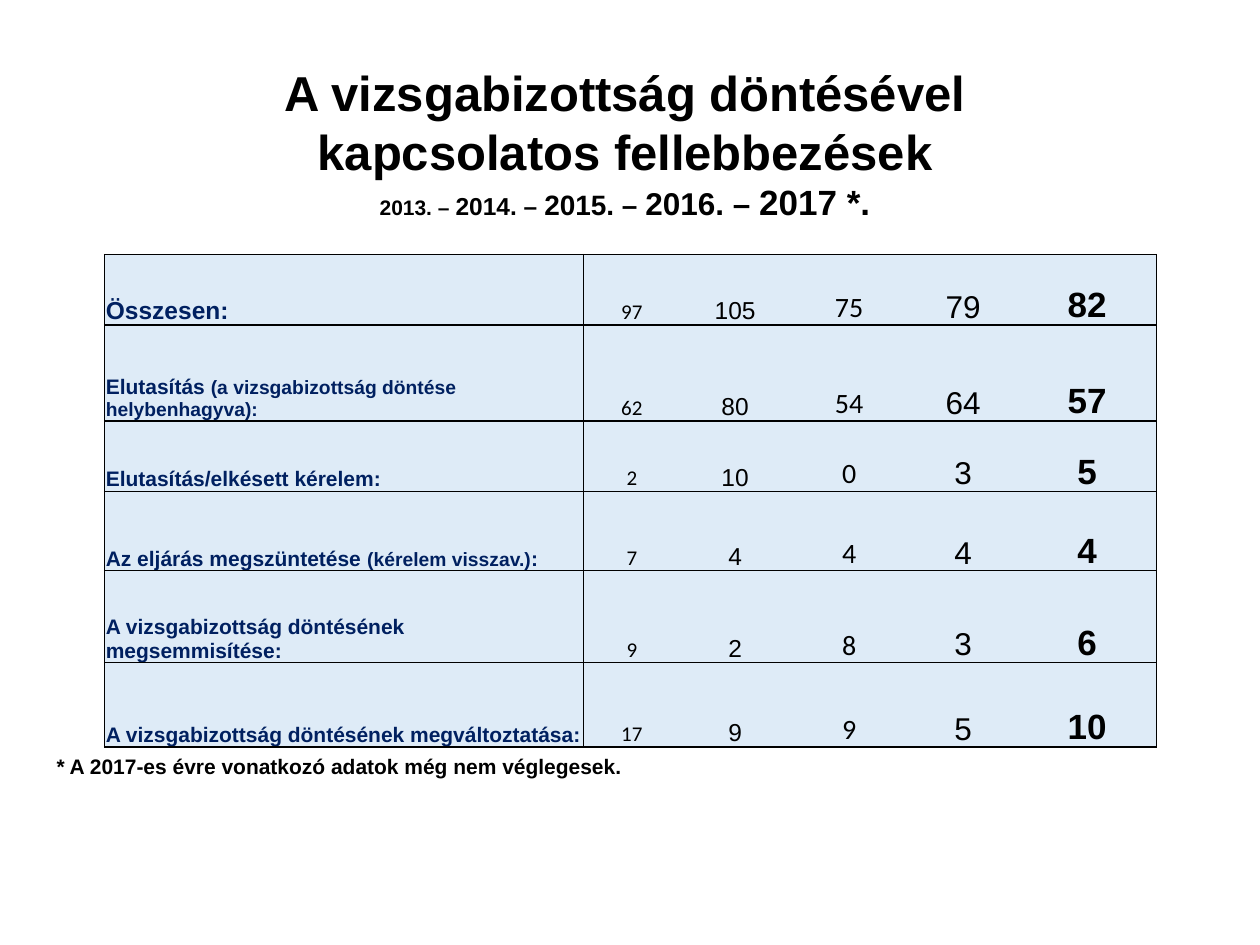
from lxml import etree
from pptx import Presentation
from pptx.dml.color import RGBColor
from pptx.enum.text import MSO_ANCHOR, MSO_AUTO_SIZE, PP_ALIGN
from pptx.oxml.ns import qn
from pptx.util import Inches, Pt

BLACK = RGBColor(0x00, 0x00, 0x00)
NAVY = RGBColor(0x00, 0x20, 0x60)
PALE_BLUE = RGBColor(0xDE, 0xEB, 0xF7)
LEFT, CENTER = PP_ALIGN.LEFT, PP_ALIGN.CENTER
MIDDLE, BOTTOM = MSO_ANCHOR.MIDDLE, MSO_ANCHOR.BOTTOM
NO_AUTOFIT = MSO_AUTO_SIZE.NONE

TITLE = "A vizsgabizottság döntésével kapcsolatos fellebbezések"
YEARS = [("2013. – ", 12), ("2014. – ", 14), ("2015. – ", 16),
         ("2016. – ", 18), ("2017 *.", 20)]
FOOTNOTE = "* A 2017-es évre vonatkozó adatok még nem véglegesek."

# Each row: height, label runs (text, size), one value per year
ROWS = [
    (0.56, [("Összesen:", 14)], [97, 105, 75, 79, 82]),
    (0.76, [("Elutasítás ", 12),
            ("(a vizsgabizottság döntése helybenhagyva):", 11)],
     [62, 80, 54, 64, 57]),
    (0.56, [("Elutasítás/elkésett kérelem:", 12)], [2, 10, 0, 3, 5]),
    (0.63, [("Az eljárás megszüntetése ", 12), ("(kérelem visszav.)", 11),
            (":", 12)], [7, 4, 4, 4, 4]),
    (0.73, [("A vizsgabizottság döntésének megsemmisítése:", 12)],
     [9, 2, 8, 3, 6]),
    (0.67, [("A vizsgabizottság döntésének megváltoztatása:", 12)],
     [17, 9, 9, 5, 10]),
]
LABEL_WIDTH = 3.8
# Each year column: width, font, size, bold
YEAR_COLUMNS = [
    (0.77, "Calibri", 12, False),
    (0.87, "Arial", 14, False),
    (0.94, "Calibri", 16, False),
    (0.87, "Arial", 18, False),
    (1.1, "Arial", 20, True),
]


class SlideBuilder:
    def __init__(self, prs):
        self.s = prs.slides.add_slide(prs.slide_layouts[5])

    def run(self, p, text, size, color=BLACK, font="Arial", bold=True):
        r = p.add_run()
        r.text = text
        r.font.name = font
        r.font.size = Pt(size)
        r.font.bold = bold
        r.font.color.rgb = color

    def title(self, x, y, w, h, text, years):
        sp = self.s.shapes.title
        sp.left, sp.top, sp.width, sp.height = map(Inches, (x, y, w, h))
        tf = sp.text_frame
        tf.word_wrap = True
        tf.auto_size = NO_AUTOFIT
        tf.vertical_anchor = MIDDLE
        p = tf.paragraphs[0]
        p.alignment = CENTER
        self.run(p, text, 28)
        p.add_line_break()
        for year, size in years:
            self.run(p, year, size)

    def note(self, x, y, w, h, text):
        sp = self.s.shapes.add_textbox(*map(Inches, (x, y, w, h)))
        tf = sp.text_frame
        tf.word_wrap = True
        p = tf.paragraphs[0]
        p.line_spacing = 0.9
        self.run(p, text, 12)

    def borders(self, cell, sides):
        """Draw the sides named in a string of L, R, T, B; clear the others."""
        tc_pr = cell._tc.get_or_add_tcPr()
        for side in "LRTB":
            ln = etree.SubElement(tc_pr, qn(f"a:ln{side}"), w=str(Pt(1)))
            if side in sides:
                fill = etree.SubElement(ln, qn("a:solidFill"))
                etree.SubElement(fill, qn("a:srgbClr"), val=str(BLACK))
            else:
                etree.SubElement(ln, qn("a:noFill"))

    def cell(self, cell, align, sides):
        """Style a cell and return its paragraph."""
        cell.margin_left = cell.margin_right = cell.margin_top = Inches(0.01)
        cell.margin_bottom = 0
        cell.vertical_anchor = BOTTOM
        self.borders(cell, sides)
        cell.fill.solid()
        cell.fill.fore_color.rgb = PALE_BLUE
        p = cell.text_frame.paragraphs[0]
        p.alignment = align
        return p

    def table(self, x, y, rows, label_width, year_columns):
        widths = [label_width] + [column[0] for column in year_columns]
        height = sum(row[0] for row in rows)
        frame = self.s.shapes.add_table(
            len(rows), len(widths), Inches(x), Inches(y),
            Inches(sum(widths)), Inches(height))
        table = frame.table
        table.first_row = table.horz_banding = False
        for column, width in zip(table.columns, widths):
            column.width = Inches(width)
        last = len(year_columns)
        for i, (row_height, label, values) in enumerate(rows):
            table.rows[i].height = Inches(row_height)
            p = self.cell(table.cell(i, 0), LEFT, "LRTB")
            for text, size in label:
                self.run(p, text, size, NAVY)
            for j, (value, column) in enumerate(zip(values, year_columns), 1):
                sides = "TB" + {1: "L", last: "R"}.get(j, "")
                p = self.cell(table.cell(i, j), CENTER, sides)
                _, font, size, bold = column
                self.run(p, str(value), size, font=font, bold=bold)


def main():
    prs = Presentation()
    prs.slide_width, prs.slide_height = Inches(10), Inches(7.5)
    slide = SlideBuilder(prs)
    slide.title(1.85, 0.68, 6.22, 0.9, TITLE, YEARS)
    slide.table(0.83, 2.02, ROWS, LABEL_WIDTH, YEAR_COLUMNS)
    slide.note(0.35, 5.95, 9.41, 0.28, FOOTNOTE)
    prs.save("out.pptx")


if __name__ == "__main__":
    main()
